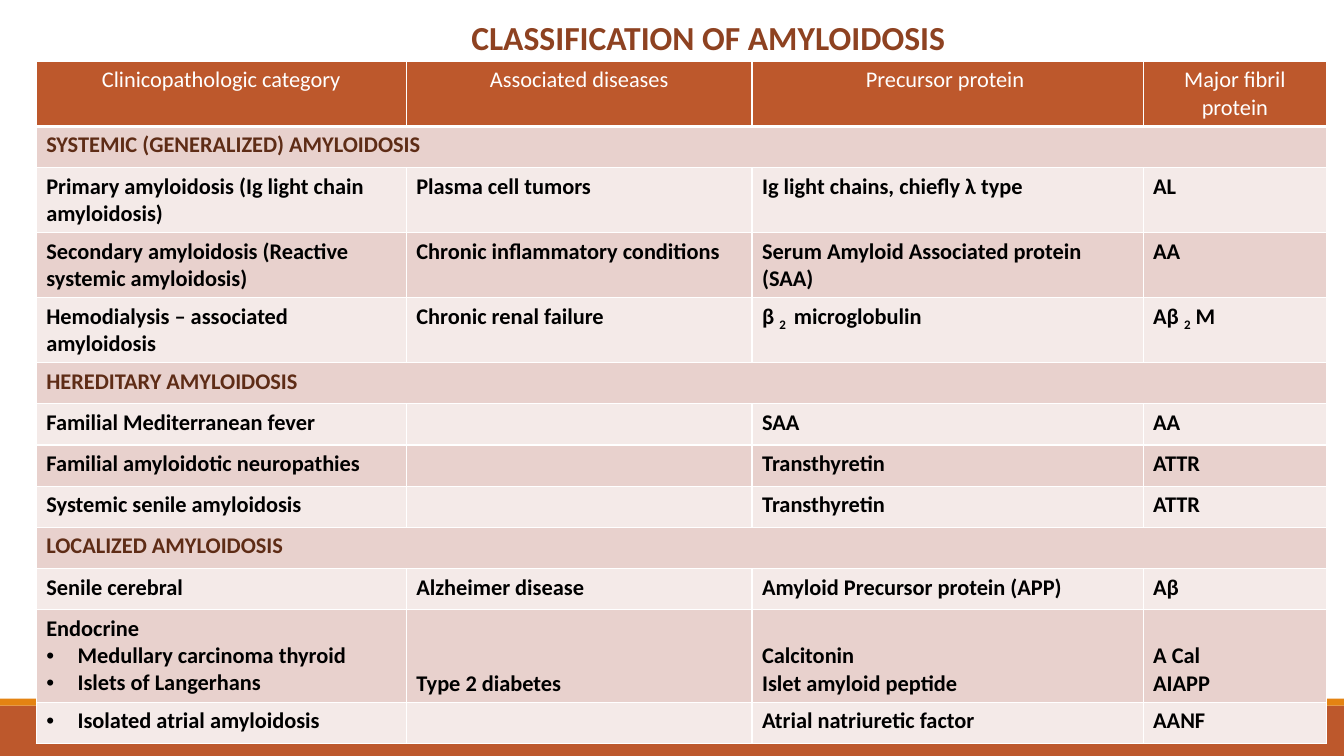
from dataclasses import dataclass

from lxml.etree import SubElement
from pptx import Presentation
from pptx.dml.color import RGBColor
from pptx.enum.shapes import MSO_SHAPE
from pptx.enum.text import MSO_ANCHOR, PP_ALIGN
from pptx.oxml import parse_xml
from pptx.oxml.ns import nsdecls, qn
from pptx.util import Inches, Pt


@dataclass(frozen=True)
class Theme:
    font: str = "Calibri"
    title_size: int = 24
    table_size: int = 16
    rust: str = "BD582C"
    orange: str = "E48312"
    title: str = "8E4221"
    section: str = "5E2C16"
    text: str = "000000"
    white: str = "FFFFFF"
    bands: tuple = ("F4EAE8", "E8D1CD")
    border: int = 1
    header_border: int = 3


HEADER = ("Clinicopathologic category", "Associated diseases",
          "Precursor protein ", "Major fibril protein")
# A row with one entry is a section heading; text between underscores is subscript.
ROWS = (
    ("SYSTEMIC (GENERALIZED) AMYLOIDOSIS",),
    ("Primary amyloidosis (Ig light chain amyloidosis)", "Plasma cell tumors",
     "Ig light chains, chiefly λ type", "AL"),
    ("Secondary amyloidosis (Reactive systemic amyloidosis)",
     "Chronic inflammatory conditions",
     "Serum Amyloid Associated protein (SAA)", "AA"),
    ("Hemodialysis – associated amyloidosis", "Chronic renal failure",
     "β _2 _ microglobulin", "Aβ _2_ M"),
    ("HEREDITARY AMYLOIDOSIS",),
    ("Familial Mediterranean fever", "", "SAA", "AA"),
    ("Familial amyloidotic neuropathies", "", "Transthyretin", "ATTR"),
    ("Systemic senile amyloidosis", "", "Transthyretin", "ATTR"),
    ("LOCALIZED AMYLOIDOSIS",),
    ("Senile cerebral", "Alzheimer disease",
     "Amyloid Precursor protein (APP)", "Aβ"),
    ("Endocrine\n• Medullary carcinoma thyroid\n• Islets of Langerhans",
     "Type 2 diabetes", "Calcitonin\nIslet amyloid peptide", "A Cal\nAIAPP"),
    ("• Isolated atrial amyloidosis", "", "Atrial natriuretic factor", "AANF"),
)
COLUMN_WIDTHS = (27.53, 25.73, 29.1, 13.65)
ONE_LINE, TWO_LINES, THREE_LINES = 5.45, 8.6, 12.2
ROW_HEIGHTS = ([TWO_LINES, ONE_LINE] + [TWO_LINES] * 3 + [ONE_LINE] * 6
               + [THREE_LINES, ONE_LINE])


class SlideBuilder:
    """Draws on one slide; every length is a percentage of the slide's size."""

    def __init__(self, presentation, theme):
        self.theme = theme
        self.width = presentation.slide_width
        self.height = presentation.slide_height
        self.slide = presentation.slides.add_slide(presentation.slide_layouts[6])

    def across(self, share):
        return round(self.width * share / 100)

    def down(self, share):
        return round(self.height * share / 100)

    def place(self, left, top, width, height):
        return (self.across(left), self.down(top),
                self.across(width), self.down(height))

    def style(self, paragraph, size, color, bold=True):
        font = paragraph.font
        font.name, font.size, font.bold = self.theme.font, Pt(size), bold
        font.color.rgb = RGBColor.from_string(color)

    def stripe(self, top, height, color):
        """Add a full-width band."""
        shape = self.slide.shapes.add_shape(
            MSO_SHAPE.RECTANGLE, *self.place(0, top, 100, height))
        shape.shadow.inherit = False
        shape.fill.solid()
        shape.fill.fore_color.rgb = RGBColor.from_string(color)
        shape.line.fill.background()

    def title(self, text, left, top, width, height):
        box = self.slide.shapes.add_textbox(*self.place(left, top, width, height))
        box.text_frame.word_wrap = True
        paragraph = box.text_frame.paragraphs[0]
        paragraph.text = text
        paragraph.alignment = PP_ALIGN.CENTER
        self.style(paragraph, self.theme.title_size, self.theme.title)

    def table(self, left, top, header, rows, widths, heights):
        table = self.slide.shapes.add_table(
            len(heights), len(widths),
            *self.place(left, top, sum(widths), sum(heights))).table
        table.first_row = table.horz_banding = False
        for column, width in zip(table.columns, widths):
            column.width = self.across(width)
        for row, height in zip(table.rows, heights):
            row.height = self.down(height)

        theme = self.theme
        for index, texts in enumerate((header, *rows)):
            is_header, is_section = index == 0, len(texts) == 1
            fill = theme.rust if is_header else theme.bands[index % 2]
            color = (theme.white if is_header
                     else theme.section if is_section else theme.text)
            most_lines = max(text.count("\n") for text in texts)
            for position in range(len(widths)):
                cell = table.cell(index, position)
                self.cell_look(cell, fill, is_header)
                if position < len(texts):
                    self.cell_text(cell, texts[position], color, is_header)
                    if position and most_lines:
                        cell.vertical_anchor = MSO_ANCHOR.BOTTOM
            if is_section:
                table.cell(index, 0).merge(table.cell(index, len(widths) - 1))

    def cell_look(self, cell, fill, is_header):
        cell.fill.solid()
        cell.fill.fore_color.rgb = RGBColor.from_string(fill)
        properties = cell._tc.get_or_add_tcPr()
        for order, side in enumerate("LRTB"):
            thick = is_header and side == "B"
            width = self.theme.header_border if thick else self.theme.border
            properties.insert(order, parse_xml(
                f'<a:ln{side} {nsdecls("a")} w="{Pt(width)}"><a:solidFill>'
                f'<a:srgbClr val="{self.theme.white}"/></a:solidFill></a:ln{side}>'))

    def cell_text(self, cell, text, color, is_header):
        frame = cell.text_frame
        for number, line in enumerate(text.split("\n")):
            paragraph = frame.add_paragraph() if number else frame.paragraphs[0]
            if line.startswith("• "):
                self.bullet(paragraph)
                line = line[2:]
            if is_header:
                paragraph.alignment = PP_ALIGN.CENTER
            self.style(paragraph, self.theme.table_size, color, bold=not is_header)
            if not line:
                continue
            for part, words in enumerate(line.split("_")):
                run = paragraph.add_run()
                run.text = words
                if part % 2:
                    run._r.get_or_add_rPr().set("baseline", "-25000")

    def bullet(self, paragraph):
        properties = paragraph._p.get_or_add_pPr()
        indent = Inches(0.31)
        properties.set("marL", str(indent))
        properties.set("indent", str(-indent))
        SubElement(properties, qn("a:buFont")).set("typeface", "Arial")
        SubElement(properties, qn("a:buChar")).set("char", "•")


def main():
    presentation = Presentation()
    presentation.slide_width, presentation.slide_height = Inches(13.33), Inches(7.5)
    theme = Theme()
    builder = SlideBuilder(presentation, theme)
    builder.stripe(93.33, 6.67, theme.rust)
    builder.stripe(92.4, 0.93, theme.orange)
    builder.table(2.7, 8.13, HEADER, ROWS, COLUMN_WIDTHS, ROW_HEIGHTS)
    builder.title("CLASSIFICATION OF AMYLOIDOSIS", 30.75, 1.6, 43.9, 6.67)
    presentation.save("out.pptx")


if __name__ == "__main__":
    main()
